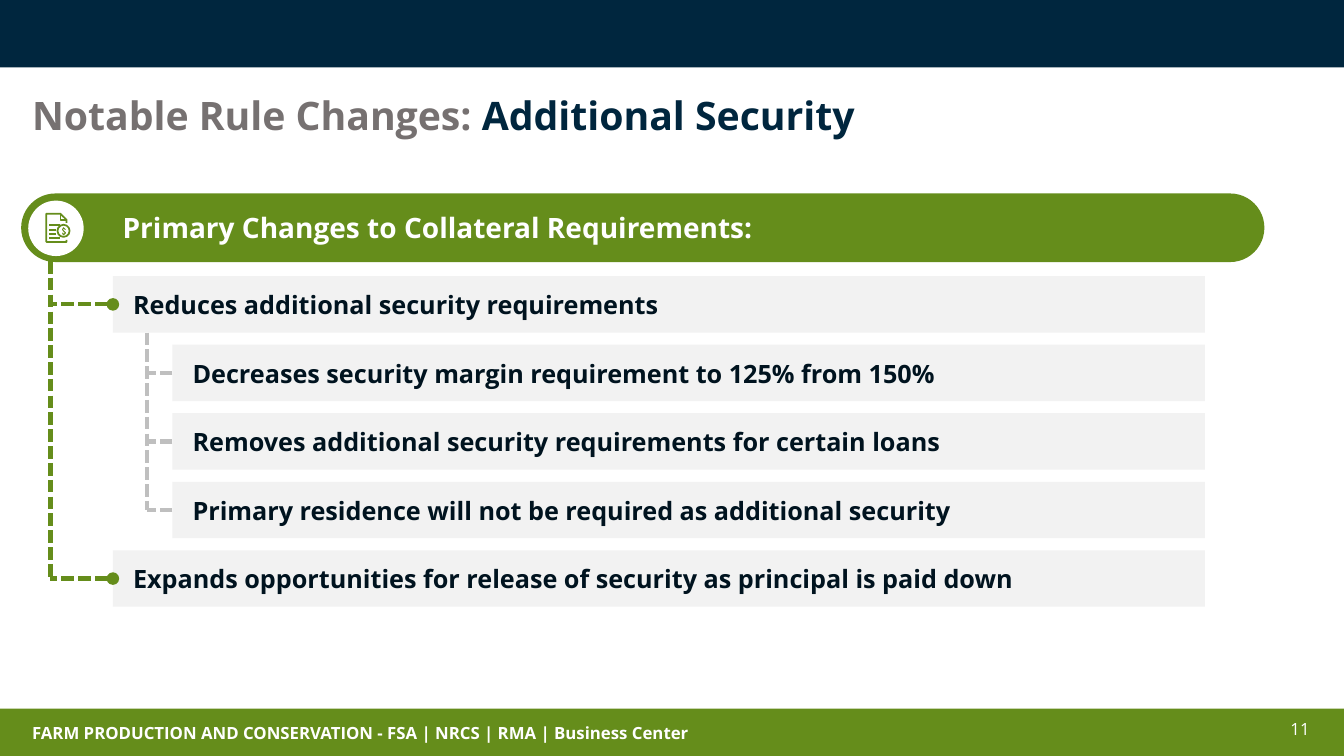
from lxml import etree
from pptx import Presentation
from pptx.dml.color import RGBColor
from pptx.enum.dml import MSO_LINE
from pptx.enum.shapes import MSO_CONNECTOR, MSO_SHAPE
from pptx.enum.text import MSO_ANCHOR, PP_ALIGN
from pptx.oxml.ns import qn
from pptx.util import Inches, Pt

THEME = dict(
    font="Open Sans", navy="00263E", ink="00131F", green="658D1B", grey="767171",
    bar="F2F2F2", branch="BFBFBF", white="FFFFFF",
    title=28, heading=20, body=18, small=12,
)

TITLE = [("Notable Rule Changes: ", "grey"), ("Additional Security", "navy")]
HEADING = "Primary Changes to Collateral Requirements:"
FOOTER = "FARM PRODUCTION AND CONSERVATION - FSA | NRCS | RMA | Business Center"
PAGE = "11"
POINTS = [  # (level, text)
    (0, "Reduces additional security requirements"),
    (1, "Decreases security margin requirement to 125% from 150%"),
    (1, "Removes additional security requirements for certain loans"),
    (1, "Primary residence will not be required as additional security"),
    (0, "Expands opportunities for release of security as principal is paid down"),
]
PAGE_ICON = [  # outline, folded corner, then lines of writing
    [(0.66, 2.38), (0.66, 2.4), (0.46, 2.4), (0.46, 2.12), (0.6, 2.12), (0.66, 2.18), (0.66, 2.21)],
    [(0.6, 2.12), (0.6, 2.18), (0.66, 2.18)],
    [(0.49, 2.23), (0.6, 2.23)],
    [(0.49, 2.28), (0.56, 2.28)],
    [(0.49, 2.32), (0.56, 2.32)],
    [(0.49, 2.36), (0.6, 2.36)],
]
DOLLAR = [(0.65, 2.28), (0.63, 2.26), (0.62, 2.28), (0.65, 2.31), (0.63, 2.33), (0.62, 2.31)]

BAR_LEFT = (1.12, 1.71)  # by level
BAR_RIGHT, BAR_HEIGHT = 11.95, 0.56
FIRST_CENTRE, PITCH = 3.02, 0.68
TRUNK_X = (0.5, 1.46)  # by level

prs = Presentation()
prs.slide_width, prs.slide_height = Inches(13.33), Inches(7.5)
s = prs.slides.add_slide(prs.slide_layouts[6])


def rgb(name):
    return RGBColor.from_string(THEME[name])


def write(sp, runs, size="body", bold=True, anchor=MSO_ANCHOR.TOP,
          insets=(0.1, 0.05, 0.1, 0.05), spacing=None):
    """Fill a shape with one paragraph of (text, colour) runs."""
    tf = sp.text_frame
    tf.word_wrap, tf.vertical_anchor = True, anchor
    tf.margin_left, tf.margin_top, tf.margin_right, tf.margin_bottom = map(Inches, insets)
    p = tf.paragraphs[0]
    p.alignment, p.line_spacing = PP_ALIGN.LEFT, spacing
    for text, colour in runs:
        r = p.add_run()
        r.text = text
        r.font.name, r.font.size, r.font.bold = THEME["font"], Pt(THEME[size]), bold
        r.font.color.rgb = rgb(colour)


def text_box(box, runs, **fmt):
    write(s.shapes.add_textbox(*map(Inches, box)), runs, **fmt)


def shape(kind, box, fill, line=None, weight=1.5):
    sp = s.shapes.add_shape(kind, *map(Inches, box))
    sp.shadow.inherit = False
    sp.fill.solid()
    sp.fill.fore_color.rgb = rgb(fill)
    if line:
        sp.line.color.rgb, sp.line.width = rgb(line), Pt(weight)
    else:
        sp.line.fill.background()
    return sp


def dashed(start, end, colour, dot=False):
    """Dashed line, with an optional round dot at its start."""
    c = s.shapes.add_connector(MSO_CONNECTOR.STRAIGHT, *map(Inches, start + end))
    c.line.color.rgb, c.line.width = rgb(colour), Pt(3)
    c.line.dash_style = MSO_LINE.SQUARE_DOT
    if dot:
        etree.SubElement(c.line._get_or_add_ln(), qn("a:headEnd"), type="oval")
    etree.SubElement(c._element.spPr, qn("a:effectLst"))


def stroke(points, weight):
    """Thin open green outline through the points."""
    (x, y), *rest = [(Inches(a), Inches(b)) for a, b in points]
    fb = s.shapes.build_freeform(x, y)
    fb.add_line_segments(rest, close=False)
    sp = fb.convert_to_shape()
    sp.shadow.inherit = False
    sp.fill.background()
    sp.line.color.rgb, sp.line.width = rgb("green"), Pt(weight)


def main():
    shape(MSO_SHAPE.RECTANGLE, (0, 0, 13.33, 0.67), "navy")
    shape(MSO_SHAPE.RECTANGLE, (0, 7.03, 13.33, 0.47), "green")
    text_box((0.22, 7.12, 7.84, 0.3), [(FOOTER, "white")], size="small")
    text_box((12.7, 7.08, 0.45, 0.4), [(PAGE, "white")], size="small", bold=False)
    text_box((0.22, 0.91, 12.78, 0.8), TITLE, size="title", spacing=0.9)

    pill = shape(MSO_SHAPE.ROUNDED_RECTANGLE, (0.22, 1.93, 12.31, 0.66), "green", "green")
    pill.adjustments[0] = 0.5
    write(pill, [(HEADING, "white")], size="heading", anchor=MSO_ANCHOR.MIDDLE,
          insets=(0.9, 0.1, 0.1, 0.1))

    centres = [FIRST_CENTRE + i * PITCH for i in range(len(POINTS))]
    for (level, text), y in zip(POINTS, centres):
        left = BAR_LEFT[level]
        bar = shape(MSO_SHAPE.RECTANGLE,
                    (left, y - BAR_HEIGHT / 2, BAR_RIGHT - left, BAR_HEIGHT), "bar")
        write(bar, [(text, "ink")], anchor=MSO_ANCHOR.MIDDLE, insets=(0.2, 0.05, 0.1, 0.05))

    trunks = (("green", 2.59), ("branch", FIRST_CENTRE + BAR_HEIGHT / 2))
    for level, (colour, top) in enumerate(trunks):
        x = TRUNK_X[level]
        stops = [y for (lv, _), y in zip(POINTS, centres) if lv == level]
        dashed((x, top), (x, stops[-1]), colour)
        for y in stops:
            dashed((BAR_LEFT[level], y), (x, y), colour, dot=level == 0)

    shape(MSO_SHAPE.OVAL, (0.28, 1.99, 0.55, 0.55), "white")
    for points in PAGE_ICON:
        stroke(points, 1.25)
    shape(MSO_SHAPE.OVAL, (0.57, 2.23, 0.12, 0.12), "white", "green", 1.25)
    stroke(DOLLAR, 0.75)

    prs.save("out.pptx")


if __name__ == "__main__":
    main()
